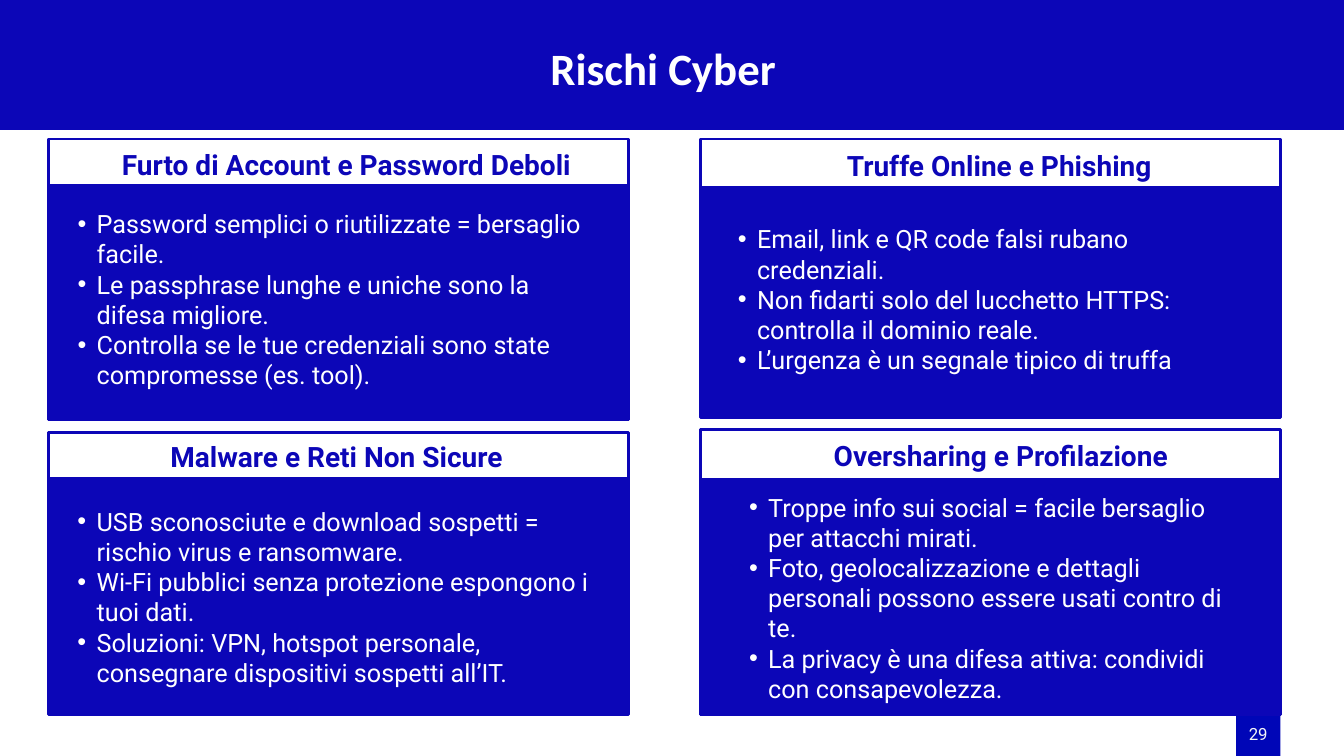
from lxml.etree import SubElement
from pptx import Presentation
from pptx.dml.color import RGBColor
from pptx.enum.shapes import MSO_SHAPE
from pptx.enum.text import MSO_ANCHOR, PP_ALIGN
from pptx.oxml.ns import qn
from pptx.util import Inches, Pt

COLORS = {"blue": "0C06B7", "badge": "0006B7", "white": "FFFFFF", "number": "F3F5F7"}

deck = Presentation()
deck.slide_width, deck.slide_height = Inches(13.33), Inches(7.5)
page = deck.slides.add_slide(deck.slide_layouts[6])


def add_box(left, top, width, height, fill=None, line=None):
    across, down = deck.slide_width / 100, deck.slide_height / 100
    box = page.shapes.add_shape(
        MSO_SHAPE.RECTANGLE,
        round(left * across), round(top * down), round(width * across), round(height * down),
    )
    box.shadow.inherit = False
    if fill:
        box.fill.solid()
        box.fill.fore_color.rgb = RGBColor.from_string(COLORS[fill])
    else:
        box.fill.background()
    if line:
        box.line.color.rgb = RGBColor.from_string(COLORS["blue"])
        box.line.width = Pt(line)
    else:
        box.line.fill.background()
    box.text_frame.word_wrap = True
    box.text_frame.vertical_anchor = MSO_ANCHOR.TOP
    return box


def add_text(box, lines, size, color, font="Roboto", bold=False, bullet=False, align=PP_ALIGN.LEFT):
    for index, line in enumerate(lines):
        para = box.text_frame.add_paragraph() if index else box.text_frame.paragraphs[0]
        para.alignment = align
        if bullet:
            properties = para._p.get_or_add_pPr()
            properties.set("marL", str(Inches(0.19)))
            properties.set("indent", str(-Inches(0.19)))
            SubElement(properties, qn("a:buFont")).set("typeface", "Arial")
            SubElement(properties, qn("a:buChar")).set("char", "•")
        span = para.add_run()
        span.text = line
        span.font.name, span.font.size, span.font.bold = font, Pt(size), bold
        span.font.color.rgb = RGBColor.from_string(COLORS[color])


number = add_box(91.97, 94.13, 3.3, 5.87, fill="badge")
number.text_frame.vertical_anchor = MSO_ANCHOR.MIDDLE
add_text(number, ["29"], 12, "number", align=PP_ALIGN.CENTER)

column_lefts, column_width, heading_height = (3.6, 52.14), 43.14, 5.87

cards = [
    {
        "frame": (18.4, 37.07), "panel": (24.53, 30.93),
        "heading": (8.33, 18.8, 35.41), "body": (5.03, 26.93, 40.36, 25.6),
        "title": "Furto di Account e Password Deboli",
        "points": [
            "Password semplici o riutilizzate = bersaglio facile.",
            "Le passphrase lunghe e uniche sono la difesa migliore.",
            "Controlla se le tue credenziali sono state compromesse (es. tool).",
        ],
    },
    {
        "frame": (18.4, 36), "panel": (24.8, 30.4),
        "heading": (62.27, 18.93, 26.11), "body": (54.16, 28.93, 39.16, 21.6),
        "title": "Truffe Online e Phishing",
        "points": [
            "Email, link e QR code falsi rubano credenziali.",
            "Non fidarti solo del lucchetto HTTPS: controlla il dominio reale.",
            "L’urgenza è un segnale tipico di truffa",
        ],
    },
    {
        "frame": (57.2, 37.33), "panel": (63.33, 30.8),
        "heading": (11.93, 57.47, 28.21), "body": (5.03, 66.27, 39.76, 25.6),
        "title": "Malware e Reti Non Sicure",
        "points": [
            "USB sconosciute e download sospetti = rischio virus e ransomware.",
            "Wi-Fi pubblici senza protezione espongono i tuoi dati.",
            "Soluzioni: VPN, hotspot personale, consegnare dispositivi sospetti all’IT.",
        ],
    },
    {
        "frame": (56.8, 37.73), "panel": (63.47, 31.07),
        "heading": (61.29, 57.33, 28.13), "body": (54.99, 64.4, 37.43, 29.6),
        "title": "Oversharing e Profilazione",
        "points": [
            "Troppe info sui social = facile bersaglio per attacchi mirati.",
            "Foto, geolocalizzazione e dettagli personali possono essere usati contro di te.",
            "La privacy è una difesa attiva: condividi con consapevolezza.",
        ],
    },
]

for index, card in enumerate(cards):
    left = column_lefts[index % 2]
    panel_top, panel_height = card["panel"]
    frame_top, frame_height = card["frame"]
    add_box(left, panel_top, column_width, panel_height, fill="blue", line=2)
    add_text(add_box(*card["body"], line=0.75), card["points"], 18, "white", bullet=True)
    add_text(add_box(*card["heading"], heading_height), [card["title"]], 20, "blue", bold=True)
    add_box(left, frame_top, column_width, frame_height, line=2)

add_box(0, -0.13, 100, 17.2, fill="blue", line=2)
add_text(add_box(40.21, 4.67, 19.58, 8.53), ["Rischi Cyber"], 32, "white", font="Calibri", bold=True)

deck.save("out.pptx")
